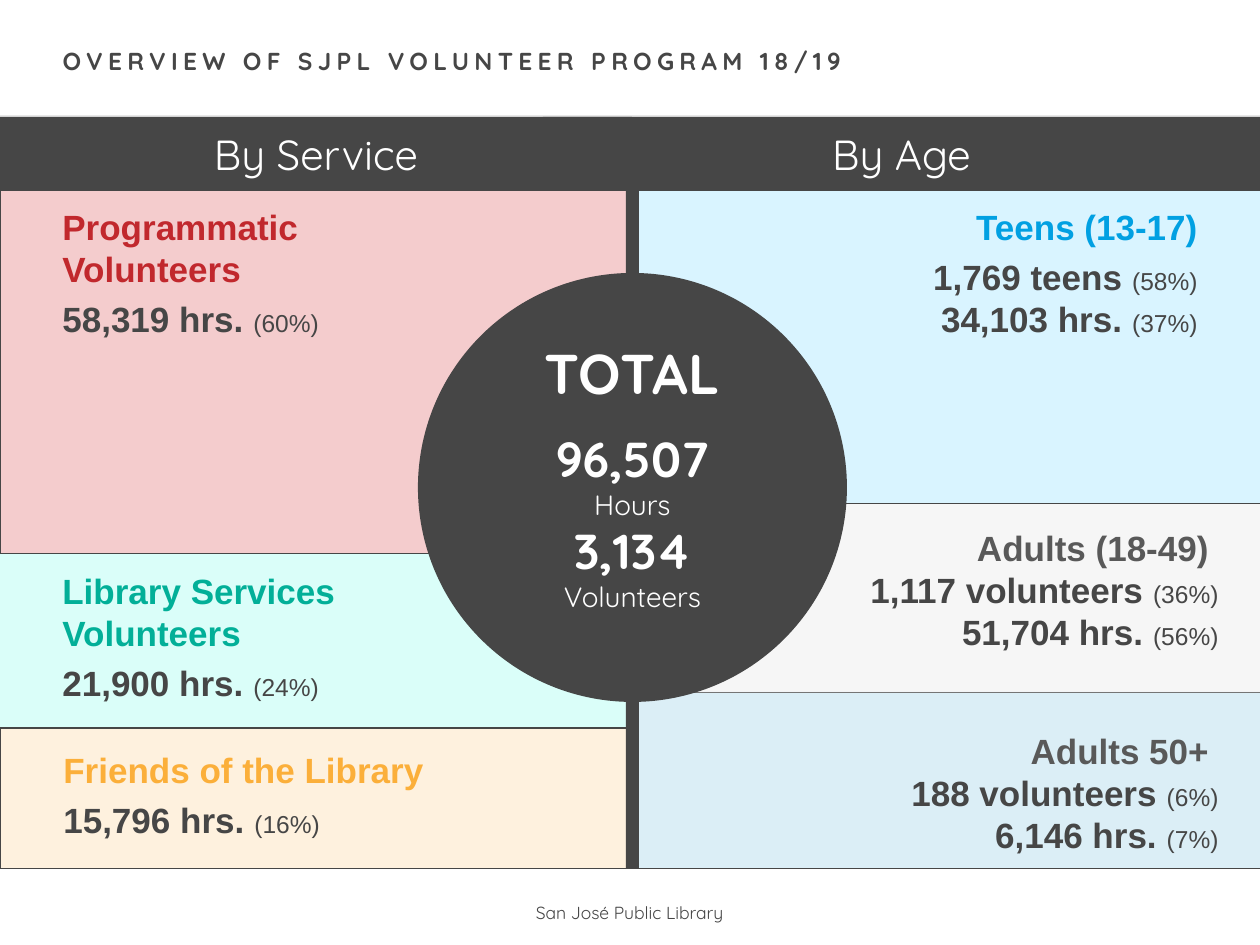
import pptx
import pptx.util
import pptx.dml.color
import pptx.enum.dml
import pptx.enum.shapes
import pptx.enum.text
import pptx.oxml.ns
import lxml.etree

Pt = pptx.util.Pt
RGB = pptx.dml.color.RGBColor
SHAPE = pptx.enum.shapes.MSO_SHAPE
ALIGN = pptx.enum.text.PP_ALIGN
ANCHOR = pptx.enum.text.MSO_ANCHOR
qn = pptx.oxml.ns.qn

PX = 914400 / 126
DARK, WHITE = RGB(0x46, 0x46, 0x46), RGB(0xFF, 0xFF, 0xFF)
RED, GREEN, ORANGE = RGB(0xC1, 0x28, 0x2D), RGB(0x02, 0xAF, 0x98), RGB(0xFB, 0xAF, 0x3A)
BLUE, GRAY, RULE = RGB(0x01, 0xA0, 0xE2), RGB(0x59, 0x59, 0x59), RGB(0x80, 0x80, 0x80)
PINK, MINT, CREAM = RGB(0xF4, 0xCC, 0xCD), RGB(0xDA, 0xFE, 0xF9), RGB(0xFE, 0xF1, 0xDE)
SKY, SILVER = RGB(0xD9, 0xF4, 0xFF), RGB(0xE2, 0xE2, 0xE2)

TITLE = "OVERVIEW OF SJPL VOLUNTEER PROGRAM 18/19"
FOOTER = "San José Public Library"
# box, fill, opacity in percent
PANELS = [
    ((634, 692, 627, 176), SKY, 100),
    ((0, 728, 632, 140), CREAM, 100),
    ((-1, 553, 632, 174), MINT, 100),
    ((0, 190, 632, 363), PINK, 100),
    ((632, 503, 628, 365), SILVER, 30),
    ((632, 190, 628, 313), SKY, 100),
]
HEADERS = [("By Service", (0, 117, 632, 73)), ("By Age", (543, 117, 717, 73))]
# box, alignment, heading colour, heading lines, gap in points, (figure, share)
GROUPS = [
    ((50, 563, 491, 149), ALIGN.LEFT, GREEN, ["Library Services", "Volunteers"], 4.6,
     [("21,900 hrs. ", "(24%)")]),
    ((50, 199, 491, 149), ALIGN.LEFT, RED, ["Programmatic", "Volunteers"], 4.6,
     [("58,319 hrs. ", "(60%)")]),
    ((51, 742, 491, 106), ALIGN.LEFT, ORANGE, ["Friends of the Library"], 4.6,
     [("15,796 hrs. ", "(16%)")]),
    ((776, 199, 434, 149), ALIGN.RIGHT, BLUE, ["Teens (13-17)"], 4.6,
     [("1,769 teens ", "(58%)"), ("34,103 hrs. ", "(37%)")]),
    ((743, 520, 488, 140), ALIGN.RIGHT, GRAY, ["Adults (18-49) "], 0,
     [("1,117 volunteers ", "(36%)"), ("51,704 hrs. ", "(56%)")]),
    ((743, 723, 488, 140), ALIGN.RIGHT, GRAY, ["Adults 50+ "], 0,
     [("188 volunteers ", "(6%)"), ("6,146 hrs. ", "(7%)")]),
]
# text, size, bold, space before
TOTALS = [("TOTAL", 32, True, 0), ("96,507", 28, True, 13), ("Hours", 16, False, 0),
          ("3,134", 28, True, 0), ("Volunteers", 16, False, 0)]


def px(*values):
    return [round(v * PX) for v in values]


def set_opacity(shape, percent):
    """Make the first colour of the shape, its fill or line, see-through."""
    clr = next(shape._element.spPr.iter(qn("a:srgbClr")))
    lxml.etree.SubElement(clr, qn("a:alpha")).set("val", str(percent * 1000))


def add_block(s, kind, box, fill):
    shape = s.shapes.add_shape(kind, *px(*box))
    shape.shadow.inherit = False
    shape.fill.solid()
    shape.fill.fore_color.rgb = fill
    shape.line.fill.background()
    return shape


def add_panel(s, box, fill, opacity):
    panel = add_block(s, SHAPE.RECTANGLE, box, fill)
    if opacity < 100:
        set_opacity(panel, opacity)
    panel.line.color.rgb = DARK
    panel.line.width = Pt(0.25)
    panel.line.dash_style = pptx.enum.dml.MSO_LINE.ROUND_DOT


def add_paragraph(tf, runs, align, before=0):
    """Add one paragraph; each run is (text, size, colour, bold, font)."""
    p = tf.paragraphs[0]
    if p.runs:
        p = tf.add_paragraph()
    p.alignment = align
    p.space_before = Pt(before)
    for text, size, color, bold, font in runs:
        r = p.add_run()
        r.text = text
        r.font.size, r.font.bold, r.font.name = Pt(size), bold, font
        r.font.color.rgb = color
    return p


def add_text(s, box):
    tf = s.shapes.add_textbox(*px(*box)).text_frame
    tf.word_wrap = True
    return tf


def add_group(s, box, align, color, heading, gap, figures):
    tf = add_text(s, box)
    for line in heading:
        add_paragraph(tf, [(line, 20, color, True, "Arial")], align)
    for i, (figure, share) in enumerate(figures):
        runs = [(figure, 20, DARK, True, "Arial"), (share, 14, DARK, False, "Arial")]
        add_paragraph(tf, runs, align, 0 if i else gap)


def add_title(s):
    title = s.shapes.title
    title.left, title.top, title.width, title.height = px(50, 42, 1159, 50)
    tf = title.text_frame
    tf.auto_size = pptx.enum.text.MSO_AUTO_SIZE.NONE
    tf.vertical_anchor = ANCHOR.TOP
    p = add_paragraph(tf, [(TITLE, 14, DARK, True, "Quicksand")], ALIGN.LEFT)
    p.line_spacing = 0.95
    p.runs[0].font._element.set("spc", "300")


def add_total(s):
    circle = add_block(s, SHAPE.OVAL, (418, 273, 429, 429), DARK)
    tf = circle.text_frame
    tf.vertical_anchor = ANCHOR.MIDDLE
    tf.margin_bottom = Pt(16.8)
    for text, size, bold, before in TOTALS:
        add_paragraph(tf, [(text, size, WHITE, bold, "Quicksand")], ALIGN.CENTER, before)


def main():
    prs = pptx.Presentation()
    prs.slide_width, prs.slide_height = px(1260, 945)
    s = prs.slides.add_slide(prs.slide_layouts[5])

    rule = s.shapes.add_connector(pptx.enum.shapes.MSO_CONNECTOR.STRAIGHT,
                                  *px(0, 116, 1260, 116))
    rule.line.color.rgb = RULE
    rule.line.width = Pt(0.5)
    set_opacity(rule, 50)
    lxml.etree.SubElement(rule._element.spPr, qn("a:effectLst"))

    add_paragraph(add_text(s, (456, 896, 347, 34)),
                  [(FOOTER, 10, DARK, False, "Quicksand")], ALIGN.CENTER)
    add_title(s)
    for panel in PANELS:
        add_panel(s, *panel)
    add_block(s, SHAPE.RECTANGLE, (626, 118, 13, 751), DARK)
    add_total(s)
    for group in GROUPS:
        add_group(s, *group)
    for text, box in HEADERS:
        tf = add_block(s, SHAPE.RECTANGLE, box, DARK).text_frame
        tf.vertical_anchor = ANCHOR.MIDDLE
        add_paragraph(tf, [(text, 24, WHITE, False, "Quicksand")], ALIGN.CENTER)
    prs.save("out.pptx")


if __name__ == "__main__":
    main()
